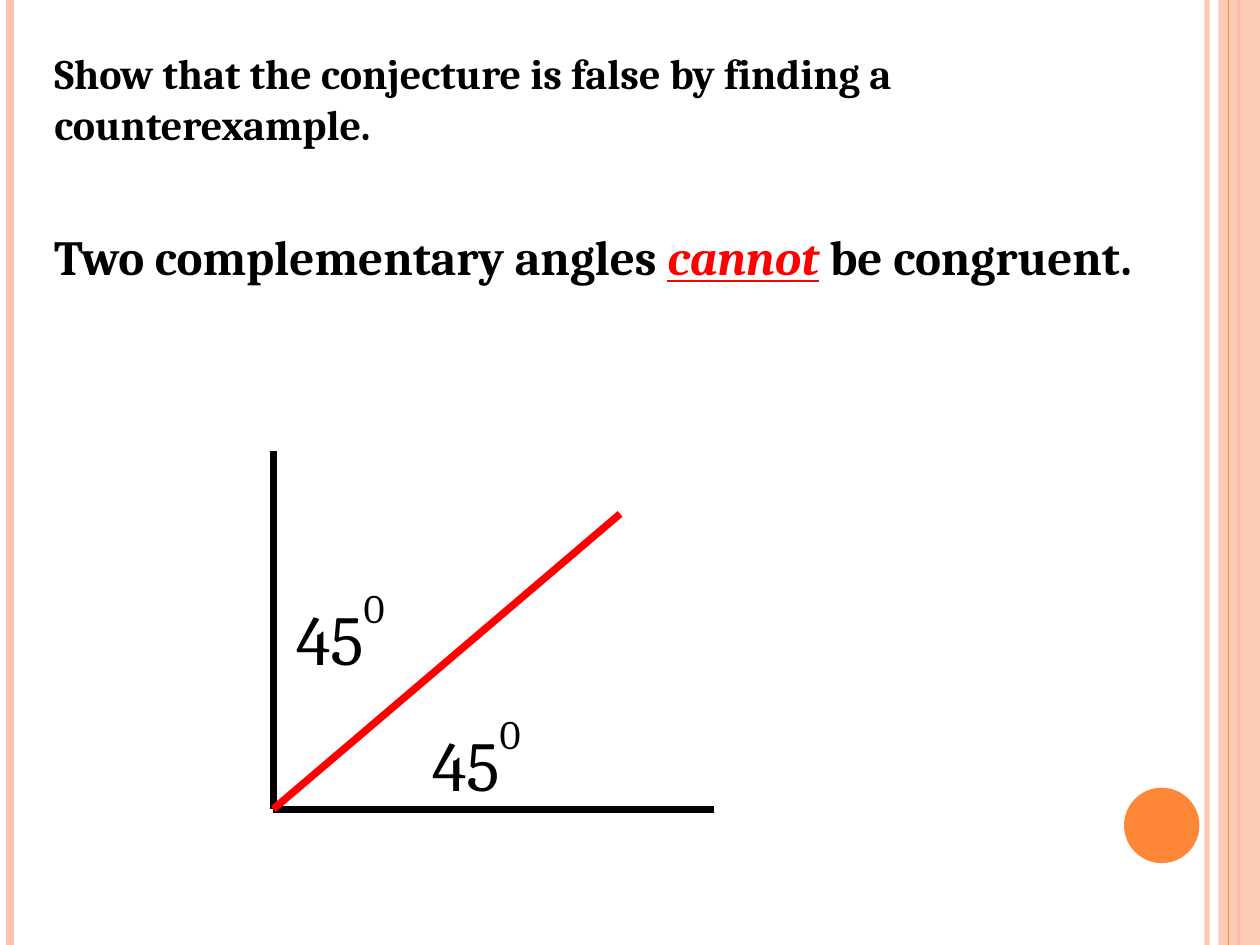
from lxml import etree
from pptx import Presentation
from pptx.dml.color import RGBColor
from pptx.enum import shapes, text
from pptx.oxml import ns
from pptx.util import Cm, Pt

COLOURS = {"black": "000000", "red": "FF0000", "orange": "FE8637", "peach": "FEC3AE"}
FONT = "Cambria"
WIDTH, HEIGHT = 25.4, 19.05

# Runs: wording, colour, emphasised
HEADING = [("Show that the conjecture is false by finding a counterexample.", "black", False)]
STATEMENT = [
    ("Two complementary angles ", "black", False),
    ("cannot", "red", True),
    (" be congruent.", "black", False),
]

# Vertical rules: x, colour, weight, opacity in percent
OUTER_RULES = [(24.33, "peach", 3, 93), (0.2, "peach", 4.5, 100), (24.97, "orange", 1.5, 100)]
INNER_RULE = (24.77, "orange", 0.75, 100)
BAND = (24.56, 0, 0.84, HEIGHT)
DISC = (22.66, 15.88, 1.52, 1.52)

VERTEX = (5.51, 16.31)
# Rays from the vertex: end point, colour, weight
RAYS = [((5.51, 9.09), "black", 4), ((14.4, 16.31), "black", 4), ((12.5, 10.36), "red", 4.25)]
ANGLE_LABELS = [(5.72, 11.63), (8.46, 14.17)]
LABEL_SIZE = (2.74, 1.96)


def colour(name):
    return RGBColor.from_string(COLOURS[name])


def set_opacity(properties, percent):
    if percent < 100:
        tone = next(properties.iter(ns.qn("a:srgbClr")))
        etree.SubElement(tone, ns.qn("a:alpha"), val=str(percent * 1000))


def add_line(page, start, end, tint, weight, opacity=100):
    line = page.shapes.add_connector(
        shapes.MSO_CONNECTOR.STRAIGHT, *(Cm(v) for v in (*start, *end)))
    line.line.color.rgb = colour(tint)
    line.line.width = Pt(weight)
    properties = line._element.spPr
    set_opacity(properties, opacity)
    etree.SubElement(properties, ns.qn("a:effectLst"))


def add_rule(page, x, tint, weight, opacity):
    add_line(page, (x, 0), (x, HEIGHT), tint, weight, opacity)


def add_filled(page, kind, place, tint, opacity=100):
    shape = page.shapes.add_shape(kind, *(Cm(v) for v in place))
    shape.shadow.inherit = False
    shape.fill.solid()
    shape.fill.fore_color.rgb = colour(tint)
    shape.line.fill.background()
    set_opacity(shape._element.spPr, opacity)


def prepare(box, place):
    """Place a text shape and return its first paragraph, set from top left."""
    box.left, box.top, box.width, box.height = (Cm(v) for v in place)
    frame = box.text_frame
    frame.word_wrap = True
    frame.auto_size = text.MSO_AUTO_SIZE.SHAPE_TO_FIT_TEXT
    frame.vertical_anchor = text.MSO_ANCHOR.TOP
    para = frame.paragraphs[0]
    para.alignment = text.PP_ALIGN.LEFT
    return para


def add_span(para, words, size, tint="black", bold=False, emphasis=False):
    span = para.add_run()
    span.text = words
    font = span.font
    font.name, font.size, font.bold = FONT, Pt(size), bold
    font.italic = font.underline = emphasis
    font.color.rgb = colour(tint)
    return span


def add_textbox(page, place):
    return prepare(page.shapes.add_textbox(*(Cm(v) for v in place)), place)


def main():
    deck = Presentation()
    deck.slide_width, deck.slide_height = Cm(WIDTH), Cm(HEIGHT)
    page = deck.slides.add_slide(deck.slide_layouts[5])

    for rule in OUTER_RULES:
        add_rule(page, *rule)
    add_filled(page, shapes.MSO_SHAPE.RECTANGLE, BAND, "peach", 87)
    add_rule(page, *INNER_RULE)
    add_filled(page, shapes.MSO_SHAPE.OVAL, DISC, "orange")

    heading = prepare(page.shapes.title, (0.84, 0.84, 22.89, 2.31))
    statement = add_textbox(page, (0.84, 4.45, 24.13, 2.64))
    for para, runs, size in ((heading, HEADING, 24), (statement, STATEMENT, 28)):
        for words, tint, emphasis in runs:
            add_span(para, words, size, tint, True, emphasis)

    for end, tint, weight in RAYS:
        add_line(page, VERTEX, end, tint, weight)
    for corner in ANGLE_LABELS:
        label = add_textbox(page, (*corner, *LABEL_SIZE))
        add_span(label, "45", 40)
        degree = add_span(label, "0", 40)
        degree.font._element.set("baseline", "60000")

    deck.save("out.pptx")


if __name__ == "__main__":
    main()
